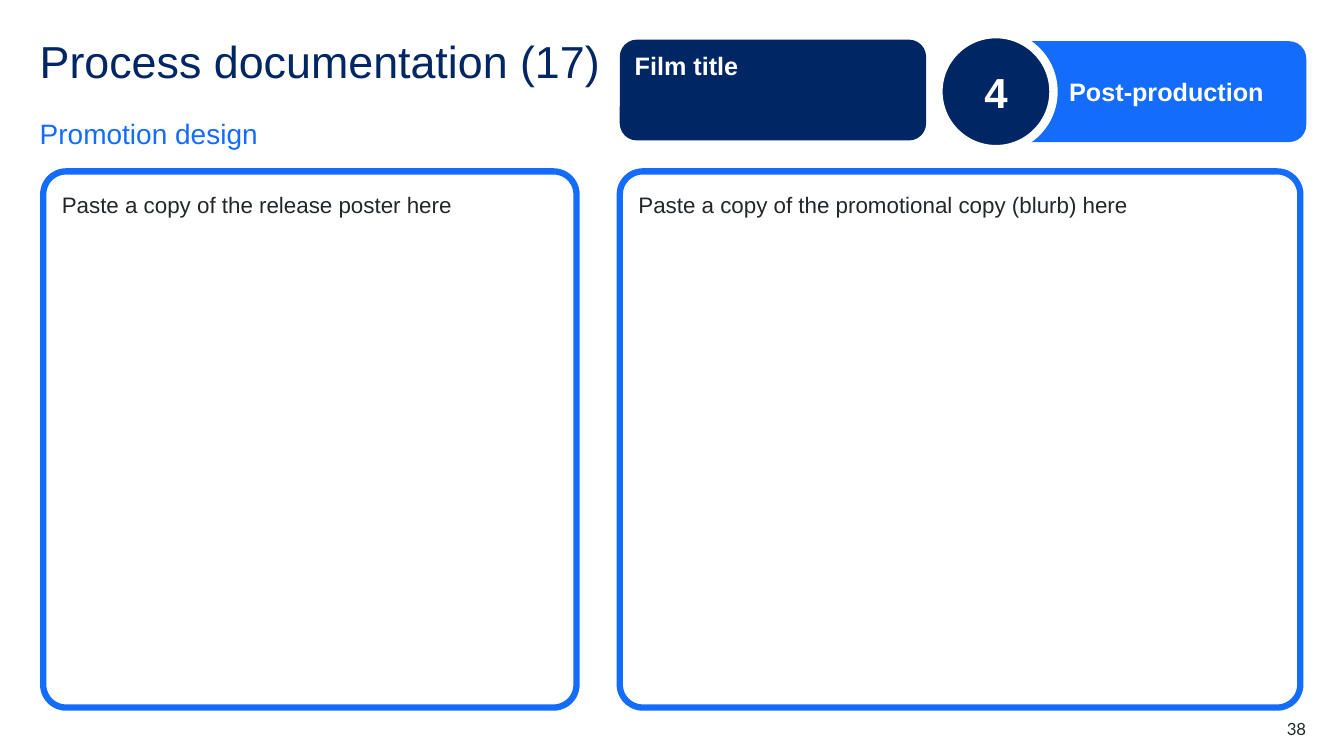
from dataclasses import dataclass
from pptx import Presentation
from pptx import util as u
from pptx.dml.color import RGBColor
from pptx.enum import shapes, text

KIND = shapes.MSO_SHAPE
SIDE = text.PP_ALIGN
HOLD = text.MSO_ANCHOR


@dataclass(frozen=True)
class Theme:
    """Hold the colours, fonts and type sizes."""
    navy: str = "002664"
    blue: str = "146CFD"
    white: str = "FFFFFF"
    ink: str = "22272B"
    font: str = "Arial"
    small: str = "Lato"
    title: int = 32
    step: int = 30
    sub: int = 20
    label: int = 18
    body: int = 16
    page: int = 12


def write(frame, words, size, color, font=Theme.font, bold=False, side=SIDE.LEFT,
          hold=HOLD.TOP, space=1.0, after=0, pad=(0, 0, 0, 0)):
    """Put one formatted paragraph in a text frame."""
    frame.word_wrap = True
    frame.auto_size = text.MSO_AUTO_SIZE.NONE
    frame.vertical_anchor = hold
    (frame.margin_left, frame.margin_top,
     frame.margin_right, frame.margin_bottom) = map(u.Cm, pad)
    para = frame.paragraphs[0]
    para.alignment = side
    para.line_spacing = space
    para.space_before = u.Pt(0)
    para.space_after = u.Pt(after)
    run = para.add_run()
    run.text = words
    run.font.name = font
    run.font.size = u.Pt(size)
    run.font.bold = bold
    run.font.color.rgb = RGBColor.from_string(color)


class Page:
    """Draw elements on one slide in one style."""

    def __init__(self, deck, theme):
        """Add a title-only slide."""
        self.theme = theme
        self.slide = deck.slides.add_slide(deck.slide_layouts[5])

    def title(self, words, box):
        """Place and fill the title."""
        head = self.slide.shapes.title
        head.left, head.top, head.width, head.height = map(u.Cm, box)
        write(head.text_frame, words, self.theme.title, self.theme.navy, space=0.9)

    def note(self, words, box, size, color, **style):
        """Add a plain text box."""
        item = self.slide.shapes.add_textbox(*map(u.Cm, box))
        write(item.text_frame, words, size, color, **style)

    def shape(self, kind, box, fill, line=None, width=0, curve=None, home=None):
        """Add a filled shape and return it."""
        item = (home or self.slide).shapes.add_shape(kind, *map(u.Cm, box))
        item.shadow.inherit = False
        item.fill.solid()
        item.fill.fore_color.rgb = RGBColor.from_string(fill)
        if line:
            item.line.color.rgb = RGBColor.from_string(line)
            item.line.width = u.Pt(width)
        else:
            item.line.fill.background()
        if curve is not None:
            item.adjustments[0] = curve
        return item

    def label(self, words, box, fill, home=None, **style):
        """Add a rounded header label."""
        item = self.shape(KIND.ROUNDED_RECTANGLE, box, fill, curve=0.17, home=home)
        write(item.text_frame, words, self.theme.label, self.theme.white,
              bold=True, **style)

    def stage(self, num, words, disc, bar):
        """Add a grouped stage bar with its numbered disc."""
        look = self.theme
        home = self.slide.shapes.add_group_shape()
        self.label(words, bar, look.blue, home, hold=HOLD.MIDDLE,
                   pad=(1.27, 0.13, 0.25, 0.13))
        item = self.shape(KIND.OVAL, disc, look.navy, look.white, 6, home=home)
        write(item.text_frame, num, look.step, look.white, bold=True,
              side=SIDE.CENTER, hold=HOLD.MIDDLE)

    def panel(self, words, left, width):
        """Add an outlined panel with a prompt."""
        look = self.theme
        item = self.shape(KIND.ROUNDED_RECTANGLE, (left, 4.32, width, 13.51),
                          look.white, look.blue, 4.5, 0.043)
        write(item.text_frame, words, look.body, look.ink, space=1.5, after=6,
              pad=(0.3, 0, 0, 0))


def main():
    """Build and save the slide."""
    deck = Presentation()
    deck.slide_width, deck.slide_height = u.Cm(33.87), u.Cm(19.05)
    look = Theme()
    page = Page(deck, look)
    page.title("Process documentation (17)", (1, 1, 14.3, 1.52))
    page.note("Promotion design", (1, 2.72, 14.3, 0.86), look.sub, look.blue,
              hold=HOLD.MIDDLE, space=1.5, after=12)
    page.label("Film title", (15.62, 1, 7.72, 2.54), look.navy,
               pad=(0.25, 0.13, 0.25, 0.13))
    page.stage("4", "Post-production", (23.65, 0.86, 2.9, 2.9),
               (25.55, 1.04, 7.37, 2.54))
    page.panel("Paste a copy of the release poster here", 1.09, 13.44)
    page.panel("Paste a copy of the promotional copy (blurb) here", 15.62, 17.15)
    page.note("38", (30.91, 18.11, 2.01, 0.51), look.page, look.ink,
              font=look.small, side=SIDE.RIGHT)
    deck.save("out.pptx")


if __name__ == "__main__":
    main()
